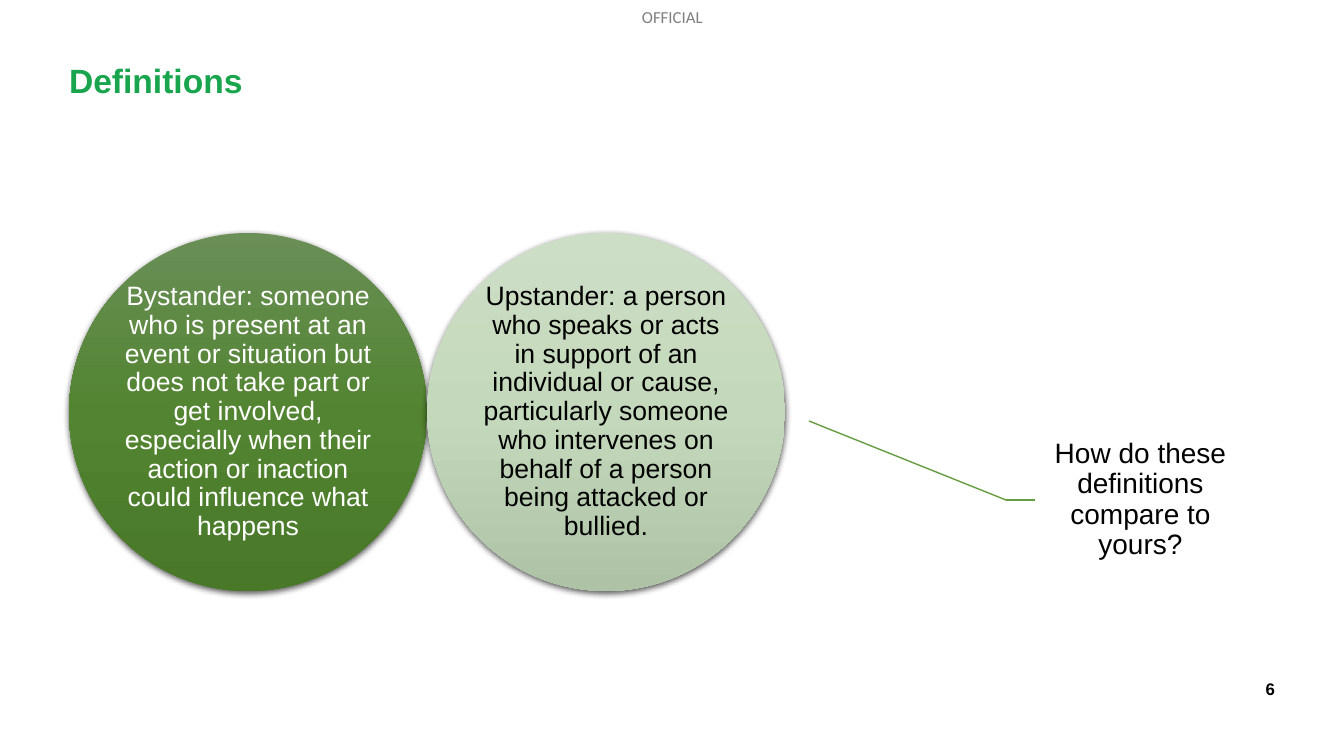
from lxml import etree
from pptx import Presentation
from pptx.dml.color import RGBColor
from pptx.enum.shapes import MSO_CONNECTOR, MSO_SHAPE
from pptx.enum.text import MSO_ANCHOR, PP_ALIGN
from pptx.oxml import parse_xml
from pptx.oxml.ns import nsdecls, qn
from pptx.util import Emu, Pt

STRAIGHT = MSO_CONNECTOR.STRAIGHT
OVAL = MSO_SHAPE.OVAL
TOP, MIDDLE = MSO_ANCHOR.TOP, MSO_ANCHOR.MIDDLE
LEFT, CENTER, RIGHT = PP_ALIGN.LEFT, PP_ALIGN.CENTER, PP_ALIGN.RIGHT

DEFINITIONS = [
    ("Bystander: someone who is present at an event or situation but does not "
     "take part or get involved, especially when their action or inaction "
     "could influence what happens",
     "FFFFFF", ("6A8F57", "528431", "487828")),
    ("Upstander: a person who speaks or acts in support of an individual or "
     "cause, particularly someone who intervenes on behalf of a person being "
     "attacked or bullied.",
     "000000", ("CDDEC6", "C4D9BB", "AEC3A5")),
]
QUESTION = "How do these definitions compare to yours?"


def px(n):
    return Emu(round(n * 914400 / 100.8))


def rgb(color):
    return RGBColor.from_string(color)


def write(sp, text, size, color, font="Arial", bold=False, align=LEFT,
          anchor=TOP, inset=0, spacing=None, wrap=True):
    tf = sp.text_frame
    tf.word_wrap = wrap
    tf.vertical_anchor = anchor
    tf.margin_left = tf.margin_right = px(inset)
    tf.margin_top = tf.margin_bottom = px(inset)
    p = tf.paragraphs[0]
    p.alignment = align
    p.line_spacing = spacing
    r = p.add_run()
    r.text = text
    r.font.name = font
    r.font.size = Pt(size)
    r.font.bold = bold
    r.font.color.rgb = rgb(color)
    return r


def add_text(s, box, text, size, color, **style):
    sp = s.shapes.add_textbox(*map(px, box))
    return sp, write(sp, text, size, color, **style)


def add_marking(s, box):
    sp, r = add_text(s, box, "OFFICIAL", 12, "000000", font="Calibri", wrap=False)
    clr = next(r.font._element.iter(qn("a:srgbClr")))
    etree.SubElement(clr, qn("a:alpha")).set("val", "50000")


def add_circle(s, box, text, color, shades):
    sp = s.shapes.add_shape(OVAL, *map(px, box))
    stops = "".join(
        f'<a:gs pos="{i * 50000}"><a:srgbClr val="{shade}"/></a:gs>'
        for i, shade in enumerate(shades))
    spPr = sp._element.spPr
    spPr.append(parse_xml(
        f'<a:gradFill {nsdecls("a")} rotWithShape="1"><a:gsLst>{stops}</a:gsLst>'
        '<a:lin ang="5400000" scaled="0"/></a:gradFill>'))
    sp.line.fill.background()
    spPr.append(parse_xml(
        f'<a:effectLst {nsdecls("a")}>'
        '<a:outerShdw blurRad="57150" dist="19050" dir="5400000" algn="ctr" '
        'rotWithShape="0"><a:srgbClr val="000000"><a:alpha val="63000"/>'
        '</a:srgbClr></a:outerShdw></a:effectLst>'))
    write(sp, text, 19, color, align=CENTER, anchor=MIDDLE, spacing=0.9)


def add_definitions(s, box):
    x, y, w, h = box
    step = w // len(DEFINITIONS)
    for i, definition in enumerate(DEFINITIONS):
        add_circle(s, (x + i * step, y, step, h), *definition)


def add_line(s, x1, y1, x2, y2):
    line = s.shapes.add_connector(STRAIGHT, px(x1), px(y1), px(x2), px(y2))
    line.line.color.rgb = rgb("669D40")
    line.line.width = Pt(1)
    etree.SubElement(line._element.spPr, qn("a:effectLst"))
    return line


def add_question(s, box):
    x, y, w, h = box
    middle = y + h // 2
    elbow = x - 29
    sp, r = add_text(s, box, QUESTION, 20, "000000", align=CENTER,
                     anchor=MIDDLE, inset=16, spacing=0.9)
    add_line(s, elbow - 197, middle - 79, elbow, middle)
    add_line(s, elbow, middle, x, middle).end_connect(sp, 1)


def main():
    prs = Presentation()
    prs.slide_width, prs.slide_height = px(1344), px(756)
    s = prs.slides.add_slide(prs.slide_layouts[6])
    add_marking(s, (642, 7, 65, 20))
    add_text(s, (69, 64, 1206, 97), "Definitions", 24, "18A54D", bold=True,
             spacing=0.9)
    add_definitions(s, (69, 233, 716, 358))
    add_question(s, (1035, 411, 211, 178))
    add_text(s, (974, 671, 301, 35), "6", 12, "000000", bold=True,
             align=RIGHT, anchor=MIDDLE)
    prs.save("out.pptx")


if __name__ == "__main__":
    main()
